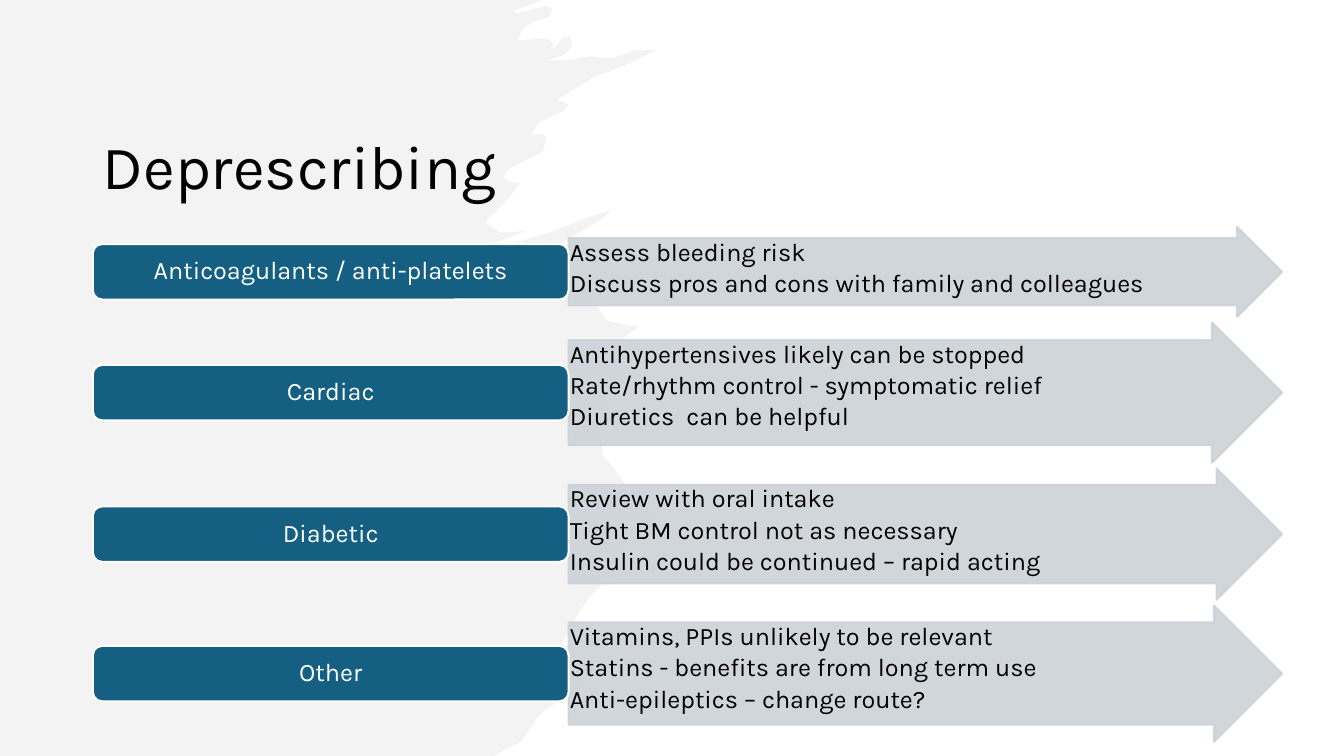
from lxml import etree
from pptx import Presentation
from pptx import util as u
from pptx.dml.color import RGBColor
from pptx.enum import shapes, text
from pptx.oxml.ns import qn

COLORS = {"ink": "000000", "paper": "FFFFFF", "brush": "E8E8E8", "topic": "156082", "advice": "CCD2D8"}

BRUSH_EDGE = [
    (538, 0), (0, 0), (0, 750), (491, 750), (497, 746), (517, 736), (534, 711), (541, 704),
    (555, 695), (582, 675), (572, 670), (544, 682), (524, 685), (553, 664), (580, 636),
    (559, 641), (558, 638), (576, 605), (585, 592), (626, 552), (587, 570), (627, 531),
    (647, 517), (651, 509), (643, 507), (617, 510), (649, 484), (625, 488), (618, 477),
    (606, 461), (598, 452), (595, 423), (602, 391), (620, 375), (615, 356), (576, 367),
    (634, 324), (624, 323), (602, 318), (589, 298), (587, 297), (581, 282), (562, 279),
    (546, 283), (529, 278), (513, 280), (500, 278), (513, 265), (531, 265), (544, 256),
    (556, 241), (598, 217), (606, 208), (580, 217), (545, 231), (510, 241), (485, 243),
    (522, 229), (497, 231), (483, 222), (483, 218), (493, 209), (499, 203), (516, 182),
    (504, 180), (500, 175), (503, 169), (539, 150), (542, 135), (535, 133), (527, 134),
    (534, 122), (559, 110), (564, 104), (558, 101), (553, 99), (590, 76), (620, 65),
    (651, 50), (629, 50), (607, 58), (584, 56), (562, 60), (543, 60), (561, 54), (568, 45),
    (565, 36), (558, 38), (549, 49), (548, 42), (542, 38), (513, 40), (520, 27), (533, 20),
    (545, 17), (548, 8), (542, 6), (513, 13), (509, 11), (525, 5),
]

TOPICS = [
    ("Anticoagulants / anti-platelets", 2.26,
     ["Assess bleeding risk", "Discuss pros and cons with family and colleagues"]),
    ("Cardiac", 3.53,
     ["Antihypertensives likely can be stopped", "Rate/rhythm control - symptomatic relief",
      "Diuretics  can be helpful"]),
    ("Diabetic", 3.3,
     ["Review with oral intake", "Tight BM control not as necessary",
      "Insulin could be continued – rapid acting"]),
    ("Other", 3.43,
     ["Vitamins, PPIs unlikely to be relevant", "Statins - benefits are from long term use",
      "Anti-epileptics – change route?"]),
]


def write(frame, lines, size=18, color="ink", align="LEFT", anchor="MIDDLE", inset=(0.25, 0.13), after=0):
    frame.word_wrap = True
    frame.auto_size = text.MSO_AUTO_SIZE.NONE
    frame.vertical_anchor = text.MSO_ANCHOR[anchor]
    frame.margin_left = frame.margin_right = u.Cm(inset[0])
    frame.margin_top = frame.margin_bottom = u.Cm(inset[1])
    for index, line in enumerate(lines):
        paragraph = frame.add_paragraph() if index else frame.paragraphs[0]
        paragraph.alignment = text.PP_ALIGN[align]
        paragraph.line_spacing = 0.9
        paragraph.space_before = u.Pt(0)
        paragraph.space_after = u.Pt(after)
        run = paragraph.add_run()
        run.text = line
        run.font.name = "Karla"
        run.font.size = u.Pt(size)
        run.font.color.rgb = RGBColor.from_string(COLORS[color])


class Deck:
    def __init__(self):
        self.show = Presentation()
        self.show.slide_width, self.show.slide_height = u.Cm(33.87), u.Cm(19.05)
        self.slide = self.show.slides.add_slide(self.show.slide_layouts[5])

    def paint(self, shape, fill, line=None, opacity=100):
        shape.shadow.inherit = False
        shape.fill.solid()
        shape.fill.fore_color.rgb = RGBColor.from_string(COLORS[fill])
        if line:
            shape.line.color.rgb = RGBColor.from_string(COLORS[line])
            shape.line.width = u.Pt(1.5)
        else:
            shape.line.fill.background()
        if opacity < 100:
            for tint in shape.element.spPr.iter(qn("a:srgbClr")):
                etree.SubElement(tint, qn("a:alpha")).set("val", str(opacity * 1000))

    def brush(self, edge):
        builder = self.slide.shapes.build_freeform(*edge[0], scale=u.Cm(2.54) / 100)
        builder.add_line_segments(edge[1:], close=True)
        stroke = builder.convert_to_shape()
        self.paint(stroke, "brush", opacity=50)
        self.slide.shapes.title.element.addprevious(stroke.element)

    def title(self, heading):
        title = self.slide.shapes.title
        title.left, title.top, title.width, title.height = map(u.Cm, (2.34, 1.78, 10.8, 5))
        write(title.text_frame, [heading], size=44)

    def arrow(self, top, height, advice):
        arrow = self.slide.shapes.add_shape(
            shapes.MSO_SHAPE.RIGHT_ARROW, u.Cm(14.33), u.Cm(top), u.Cm(17.98), u.Cm(height))
        arrow.adjustments[0] = 0.75
        self.paint(arrow, "advice", line="advice", opacity=90)
        write(arrow.text_frame, advice, anchor="TOP", inset=(0.03, 0.03), after=3)

    def label(self, middle, topic):
        height = 1.4
        label = self.slide.shapes.add_shape(
            shapes.MSO_SHAPE.ROUNDED_RECTANGLE, u.Cm(2.34), u.Cm(middle - height / 2), u.Cm(11.99), u.Cm(height))
        self.paint(label, "topic", line="paper")
        write(label.text_frame, [topic], color="paper", align="CENTER")


def main():
    deck = Deck()
    deck.brush(BRUSH_EDGE)
    deck.title("Deprescribing")
    top, gap = 5.72, 0.15
    for topic, height, advice in TOPICS:
        deck.arrow(top, height, advice)
        deck.label(top + height / 2, topic)
        top += height + gap
    deck.show.save("out.pptx")


if __name__ == "__main__":
    main()
